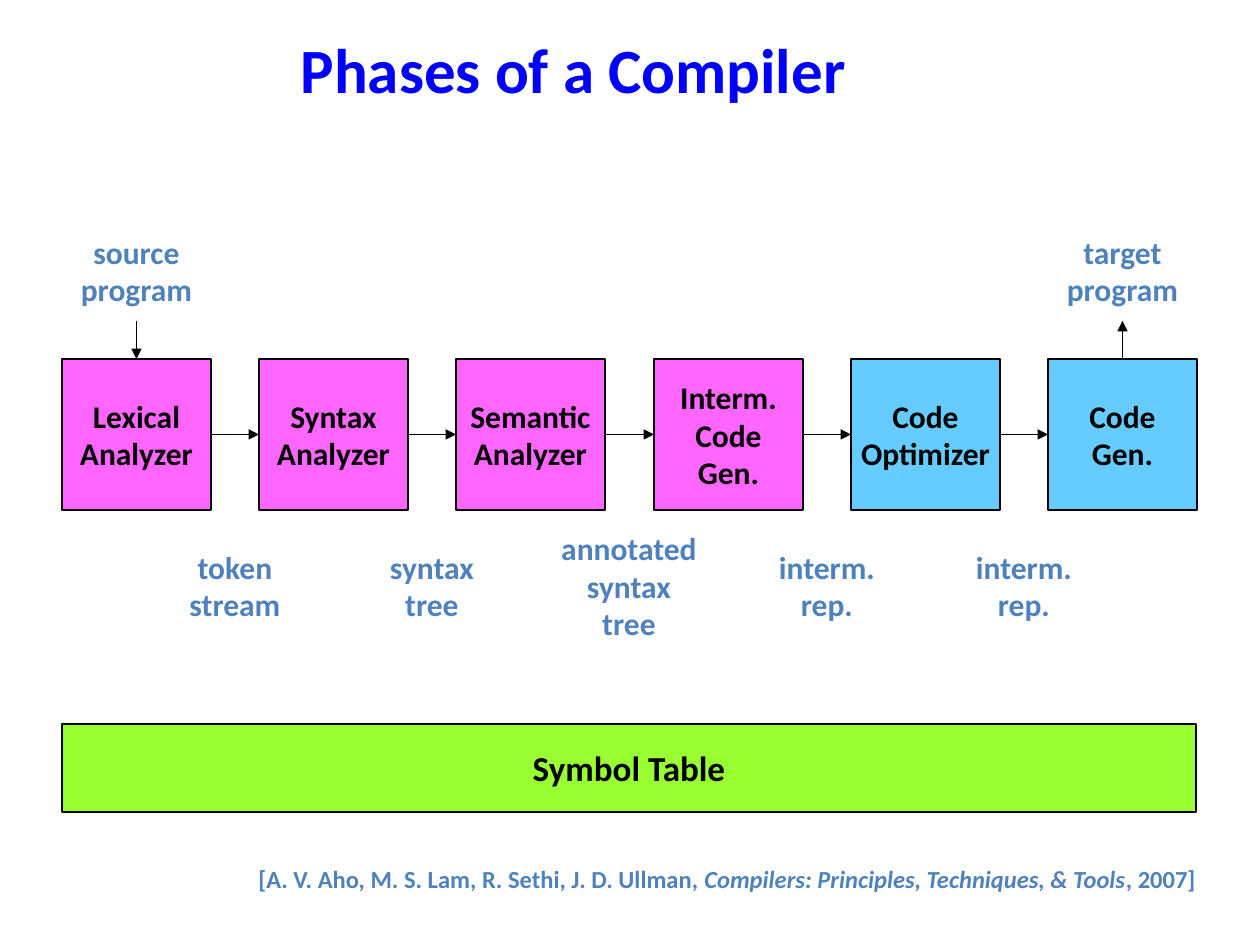
from dataclasses import dataclass

from pptx import Presentation
from pptx import util as u
from pptx.dml.color import RGBColor
from pptx.enum import shapes, text
from pptx.oxml.ns import qn
from lxml import etree

EMU_PER_PX = 914400 / 126
FONT = "Calibri"
BLACK = RGBColor(0x00, 0x00, 0x00)
BLUE = RGBColor(0x00, 0x00, 0xFF)
STEEL = RGBColor(0x4F, 0x81, 0xBD)
PINK = RGBColor(0xFF, 0x66, 0xFF)
SKY = RGBColor(0x66, 0xCC, 0xFF)
GREEN = RGBColor(0x99, 0xFF, 0x33)

TOP, LEFT, BOTTOM, RIGHT = range(4)
BOX_LEFT, BOX_TOP, BOX_WIDTH, BOX_HEIGHT = 62, 359, 149, 151
BOX_SPAN = 986
PROGRAM_TOP, LABEL_HEIGHT = 220, 101
FLOW_TOP, FLOW_WIDTH = 535, 140


@dataclass(frozen=True)
class Frame:
    left: int
    top: int
    width: int
    height: int

    def emu(self) -> list[int]:
        return [px(n) for n in (self.left, self.top, self.width, self.height)]


@dataclass(frozen=True)
class Phase:
    name: str
    fill: RGBColor
    output: str


PHASES = [
    Phase("Lexical\nAnalyzer", PINK, "token\nstream"),
    Phase("Syntax\nAnalyzer", PINK, "syntax\ntree"),
    Phase("Semantic\nAnalyzer", PINK, "annotated\nsyntax\ntree"),
    Phase("Interm.\nCode\nGen.", PINK, "interm.\nrep."),
    Phase("Code\nOptimizer", SKY, "interm.\nrep."),
    Phase("Code\nGen.", SKY, "target\nprogram"),
]


def px(length: int) -> int:
    return round(length * EMU_PER_PX)


def set_all(target, values: dict) -> None:
    for name, value in values.items():
        setattr(target, name, value)


def add_run(paragraph, words: str, size: int, color: RGBColor, italic=None) -> None:
    run = paragraph.add_run()
    run.text = words
    set_all(run.font, {"name": FONT, "size": u.Pt(size), "bold": True, "italic": italic})
    run.font.color.rgb = color


def write(shape, words: str, size: int, color: RGBColor) -> None:
    frame = shape.text_frame
    set_all(frame, {
        "word_wrap": False,
        "vertical_anchor": text.MSO_ANCHOR.MIDDLE,
        "margin_left": 0,
        "margin_right": 0,
    })
    for index, line in enumerate(words.split("\n")):
        paragraph = frame.add_paragraph() if index else frame.paragraphs[0]
        paragraph.alignment = text.PP_ALIGN.CENTER
        add_run(paragraph, line, size, color)


def add_box(slide, frame: Frame, words: str, fill: RGBColor, size: int = 18):
    box = slide.shapes.add_shape(shapes.MSO_SHAPE.RECTANGLE, *frame.emu())
    box.shadow.inherit = False
    box.fill.solid()
    box.fill.fore_color.rgb = fill
    box.line.color.rgb = BLACK
    box.line.width = u.Pt(1)
    write(box, words, size, BLACK)
    return box


def add_label(slide, frame: Frame, words: str, size: int = 18, color: RGBColor = STEEL):
    label = slide.shapes.add_textbox(*frame.emu())
    write(label, words, size, color)
    return label


def add_arrow(slide, start, start_side: int, end, end_side: int) -> None:
    arrow = slide.shapes.add_connector(shapes.MSO_CONNECTOR.STRAIGHT, 0, 0, 0, 0)
    arrow.begin_connect(start, start_side)
    arrow.end_connect(end, end_side)
    arrow.line.color.rgb = BLACK
    arrow.line.width = u.Pt(1)
    properties = arrow._element.spPr
    etree.SubElement(properties.find(qn("a:ln")), qn("a:tailEnd"), type="triangle")
    etree.SubElement(properties, qn("a:effectLst"))


def add_citation(slide, frame: Frame) -> None:
    citation = slide.shapes.add_textbox(*frame.emu())
    citation.text_frame.word_wrap = True
    paragraph = citation.text_frame.paragraphs[0]
    paragraph.alignment = text.PP_ALIGN.RIGHT
    add_run(paragraph, "[A. V. Aho, M. S. Lam, R. Sethi, J. D. Ullman, ", 14, STEEL)
    add_run(paragraph, "Compilers: Principles, Techniques, & Tools", 14, STEEL, True)
    add_run(paragraph, ", 2007]", 14, STEEL)


def main() -> None:
    presentation = Presentation()
    set_all(presentation, {"slide_width": px(1260), "slide_height": px(945)})
    slide = presentation.slides.add_slide(presentation.slide_layouts[6])

    add_label(slide, Frame(25, 10, 1097, 116), "Phases of a Compiler", 36, BLUE)

    last = len(PHASES) - 1
    lefts = [BOX_LEFT + round(i * BOX_SPAN / last) for i in range(len(PHASES))]
    boxes = [
        add_box(slide, Frame(left, BOX_TOP, BOX_WIDTH, BOX_HEIGHT), phase.name, phase.fill)
        for left, phase in zip(lefts, PHASES)
    ]
    for start, end in zip(boxes, boxes[1:]):
        add_arrow(slide, start, RIGHT, end, LEFT)

    for left, following, phase in zip(lefts, lefts[1:], PHASES):
        center = (left + BOX_WIDTH + following) // 2
        frame = Frame(center - FLOW_WIDTH // 2, FLOW_TOP, FLOW_WIDTH, LABEL_HEIGHT)
        add_label(slide, frame, phase.output)

    source, target = (
        add_label(slide, Frame(left, PROGRAM_TOP, BOX_WIDTH, LABEL_HEIGHT), words)
        for left, words in ((lefts[0], "source\nprogram"), (lefts[-1], PHASES[-1].output))
    )
    add_arrow(slide, source, BOTTOM, boxes[0], TOP)
    add_arrow(slide, boxes[-1], TOP, target, BOTTOM)

    add_box(slide, Frame(BOX_LEFT, 724, 1134, 88), "Symbol Table", GREEN, 20)
    add_citation(slide, Frame(BOX_LEFT, 858, 1146, 42))
    presentation.save("out.pptx")


if __name__ == "__main__":
    main()
